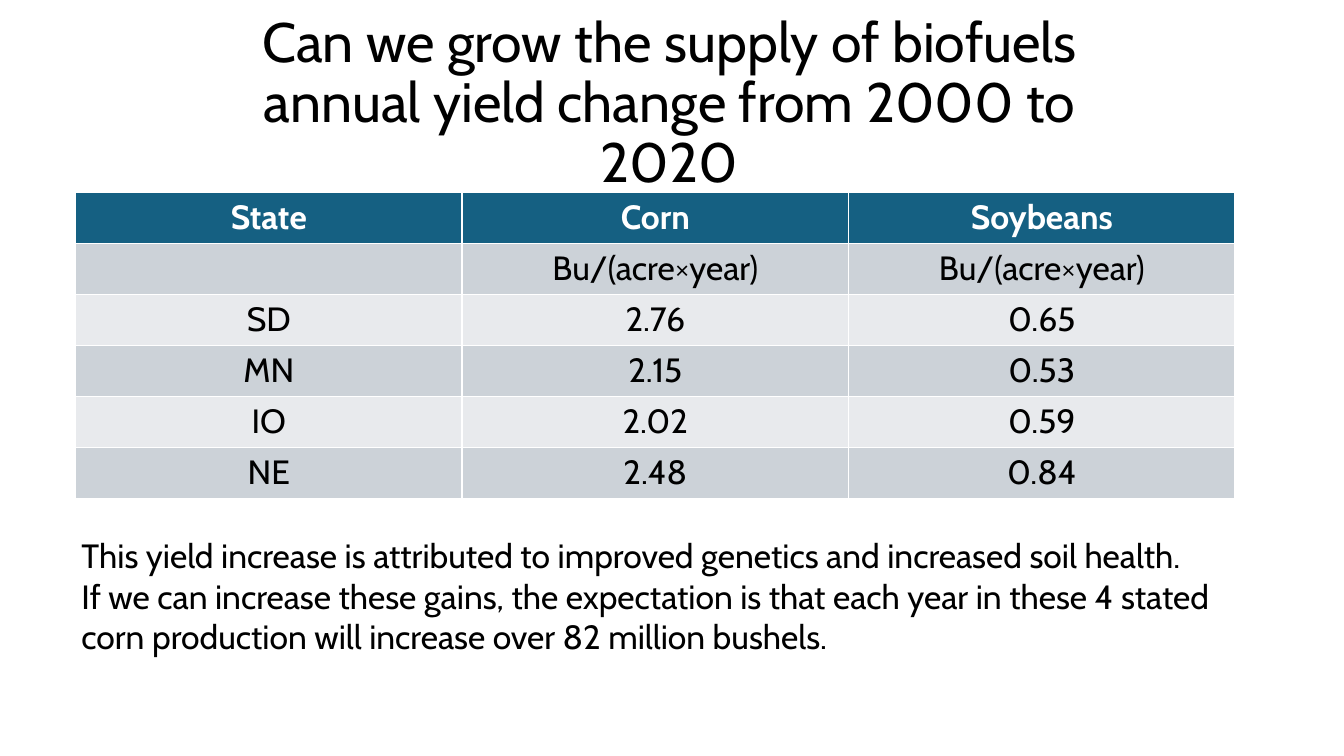
from dataclasses import dataclass

from pptx import Presentation
from pptx.dml.color import RGBColor
from pptx.enum import text
from pptx.util import Inches, Pt


@dataclass(frozen=True)
class Theme:
    font: str = "Cabin"
    title_size: float = 39.6
    body_size: float = 24
    ink: str = "000000"
    header_ink: str = "FFFFFF"
    header_fill: str = "156082"
    band_fills: tuple = ("CCD2D8", "E8EAED")


THEME = Theme()
TITLE = "Can we grow the supply of biofuels\vannual yield change from 2000 to 2020"
YIELD_UNIT = "Bu/(acre×year)"
YIELDS = [
    ("State", "Corn", "Soybeans"),
    ("", YIELD_UNIT, YIELD_UNIT),
    ("SD", "2.76", "0.65"),
    ("MN", "2.15", "0.53"),
    ("IO", "2.02", "0.59"),
    ("NE", "2.48", "0.84"),
]
CONCLUSIONS = [
    "This yield increase is attributed to improved genetics and increased soil health.",
    "If we can increase these gains, the expectation is that each year in these 4 stated",
    "corn production will increase over 82 million bushels.",
]


def set_attributes(target, values):
    for name, value in values.items():
        setattr(target, name, value)


def place(shape, left, top, width, height):
    box = {"left": left, "top": top, "width": width, "height": height}
    set_attributes(shape, {name: Inches(value) for name, value in box.items()})


def format_paragraph(paragraph, size, color=THEME.ink, bold=False,
                     alignment=text.PP_ALIGN.CENTER):
    paragraph.alignment = alignment
    set_attributes(paragraph.font, {"name": THEME.font, "size": Pt(size), "bold": bold})
    paragraph.font.color.rgb = RGBColor.from_string(color)


def add_title(slide, wording):
    title = slide.shapes.title
    place(title, 1.84, 0.31, 9.6, 1.45)
    set_attributes(title.text_frame, {
        "text": wording,
        "word_wrap": True,
        "auto_size": text.MSO_AUTO_SIZE.NONE,
        "vertical_anchor": text.MSO_ANCHOR.MIDDLE,
    })
    paragraph = title.text_frame.paragraphs[0]
    format_paragraph(paragraph, THEME.title_size)
    paragraph.line_spacing = 0.9


def add_yield_table(slide, rows):
    frame = slide.shapes.add_table(len(rows), len(rows[0]), Inches(0.75), Inches(1.91),
                                   Inches(11.5), Inches(3))
    for row_index, row in enumerate(rows):
        header = row_index == 0
        fill = THEME.header_fill if header else THEME.band_fills[(row_index - 1) % 2]
        color = THEME.header_ink if header else THEME.ink
        for column_index, wording in enumerate(row):
            cell = frame.table.cell(row_index, column_index)
            cell.text = wording
            cell.fill.solid()
            cell.fill.fore_color.rgb = RGBColor.from_string(fill)
            format_paragraph(cell.text_frame.paragraphs[0], THEME.body_size, color, header)


def add_conclusions(slide, lines):
    shape = slide.shapes.add_textbox(Inches(0.71), Inches(5.26), Inches(11.81), Inches(1.72))
    shape.text_frame.word_wrap = True
    shape.text_frame.text = "\n".join(lines)
    for paragraph in shape.text_frame.paragraphs:
        format_paragraph(paragraph, THEME.body_size, alignment=text.PP_ALIGN.LEFT)


def main():
    presentation = Presentation()
    set_attributes(presentation, {"slide_width": Inches(13.33), "slide_height": Inches(7.5)})
    slide = presentation.slides.add_slide(presentation.slide_layouts.get_by_name("Title Only"))
    add_title(slide, TITLE)
    add_yield_table(slide, YIELDS)
    add_conclusions(slide, CONCLUSIONS)
    presentation.save("out.pptx")


if __name__ == "__main__":
    main()
